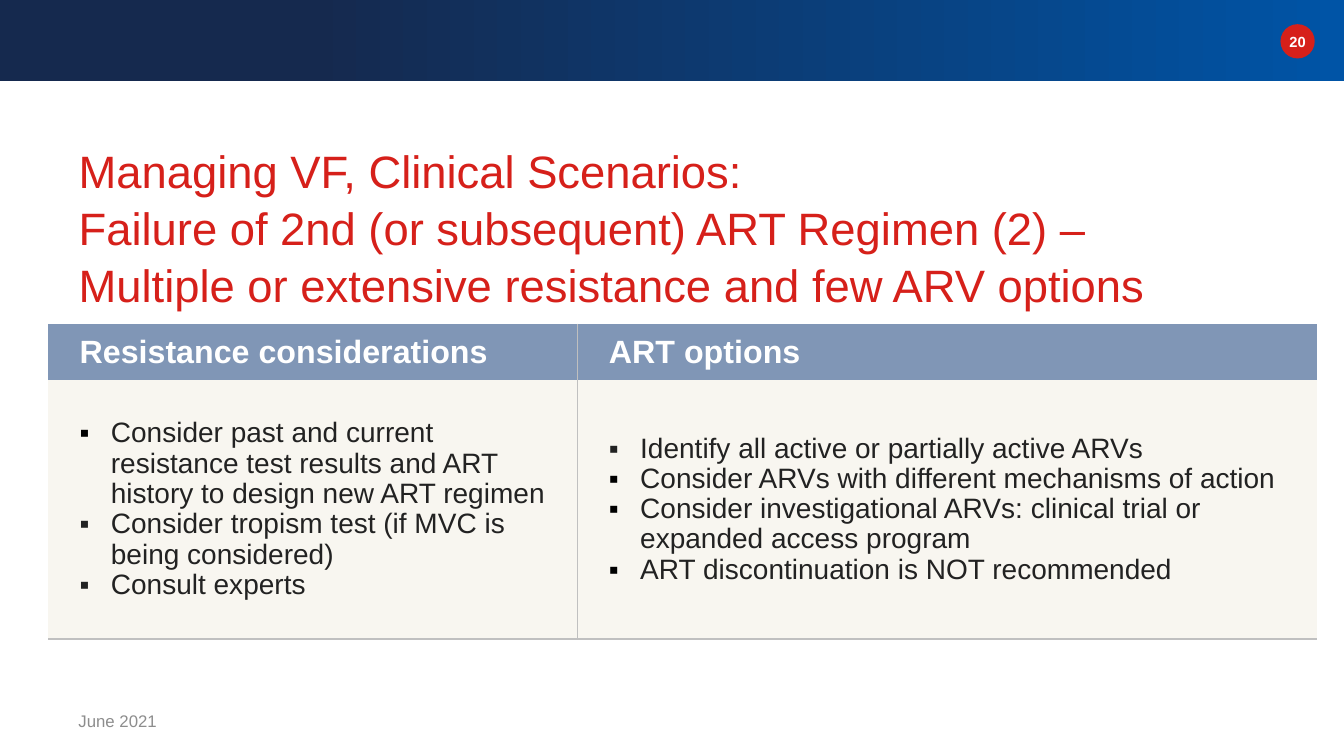
from dataclasses import dataclass

from lxml import etree
from pptx import Presentation
from pptx import util as u
from pptx.dml.color import RGBColor
from pptx.enum import shapes, text
from pptx.oxml.ns import qn


@dataclass(frozen=True)
class Theme:
    font: str = "Arial"
    navy: str = "15294E"
    blue: str = "0054A6"
    red: str = "D6201A"
    white: str = "FFFFFF"
    ink: str = "222222"
    black: str = "000000"
    grey: str = "8D8D8D"
    header: str = "8096B6"
    body: str = "F8F6F0"
    header_line: str = "BFBFBF"
    body_line: str = "C0C0C0"
    title_pt: float = 32.4
    header_pt: float = 23
    body_pt: float = 20
    footer_pt: float = 12
    number_pt: float = 10.5


T = Theme()


def rgb(color):
    return RGBColor.from_string(color)


def write(p, content, size, color, bold=False, align=None, spacing=None):
    p.text = content
    p.alignment = align
    p.line_spacing = spacing
    for r in p.runs:
        r.font.name = T.font
        r.font.size = u.Pt(size)
        r.font.bold = bold
        r.font.color.rgb = rgb(color)


def add_bullet(p, color):
    pPr = p._p.get_or_add_pPr()
    indent = u.Inches(0.31)
    pPr.set("marL", str(indent))
    pPr.set("indent", str(-indent))
    clr = etree.SubElement(pPr, qn("a:buClr"))
    etree.SubElement(clr, qn("a:srgbClr"), val=color)
    etree.SubElement(pPr, qn("a:buFont"), typeface=T.font)
    etree.SubElement(pPr, qn("a:buChar"), char="▪")


def add_borders(cell, colors):
    tcPr = cell._tc.get_or_add_tcPr()
    for side in ("L", "R", "T", "B"):
        ln = etree.SubElement(tcPr, qn(f"a:ln{side}"), w=str(u.Pt(1)))
        if side in colors:
            fill = etree.SubElement(ln, qn("a:solidFill"))
            etree.SubElement(fill, qn("a:srgbClr"), val=colors[side])
        else:
            etree.SubElement(ln, qn("a:noFill"))


class Deck:
    """Hold the theme and the current slide, and add elements to it."""

    def __init__(self, theme):
        self.theme = theme
        self.prs = Presentation()
        self.prs.slide_width, self.prs.slide_height = u.Inches(13.33), u.Inches(7.5)
        self.s = self.prs.slides.add_slide(self.prs.slide_layouts[5])

    def shape(self, kind, box, color):
        sp = self.s.shapes.add_shape(kind, *map(u.Inches, box))
        sp.shadow.inherit = False
        sp.line.fill.background()
        sp.fill.solid()
        sp.fill.fore_color.rgb = rgb(color)
        return sp

    def band(self, box, stops):
        sp = self.shape(shapes.MSO_SHAPE.RECTANGLE, box, self.theme.navy)
        sp.fill.gradient()
        sp.fill.gradient_angle = 0
        for stop, (position, color) in zip(sp.fill.gradient_stops, stops):
            stop.position = position
            stop.color.rgb = rgb(color)

    def title(self, box, content):
        sp = self.s.shapes.title
        sp.left, sp.top, sp.width, sp.height = map(u.Inches, box)
        tf = sp.text_frame
        tf.word_wrap = True
        tf.auto_size = text.MSO_AUTO_SIZE.NONE
        tf.vertical_anchor = text.MSO_ANCHOR.TOP
        tf.margin_top = u.Inches(0.08)
        write(tf.paragraphs[0], content, self.theme.title_pt, self.theme.red,
              align=text.PP_ALIGN.LEFT, spacing=1.05)

    def label(self, box, content, size, color, **fmt):
        tf = self.s.shapes.add_textbox(*map(u.Inches, box)).text_frame
        tf.word_wrap = True
        tf.vertical_anchor = text.MSO_ANCHOR.MIDDLE
        write(tf.paragraphs[0], content, size, color, **fmt)

    def cell(self, cell, fill, borders):
        cell.margin_left = cell.margin_right = u.Inches(0.31)
        cell.margin_top = cell.margin_bottom = u.Inches(0.06)
        cell.vertical_anchor = text.MSO_ANCHOR.MIDDLE
        add_borders(cell, borders)
        cell.fill.solid()
        cell.fill.fore_color.rgb = rgb(fill)
        return cell.text_frame

    def table(self, box, widths, heights, columns):
        t = self.theme
        tbl = self.s.shapes.add_table(2, len(columns), *map(u.Inches, box)).table
        tbl.first_row = tbl.horz_banding = False
        for row, height in zip(tbl.rows, heights):
            row.height = u.Inches(height)
        for i, (heading, items) in enumerate(columns):
            tbl.columns[i].width = u.Inches(widths[i])
            inner = "R" if i == 0 else "L"
            tf = self.cell(tbl.cell(0, i), t.header, {inner: t.header_line})
            write(tf.paragraphs[0], heading, t.header_pt, t.white, bold=True, spacing=1.02)
            tf = self.cell(tbl.cell(1, i), t.body, {inner: t.body_line, "B": t.body_line})
            for n, (item, bullet) in enumerate(items):
                p = tf.add_paragraph() if n else tf.paragraphs[0]
                write(p, item, t.body_pt, t.ink, spacing=0.97)
                add_bullet(p, bullet)


def main():
    deck = Deck(T)
    deck.band((0, 0, 13.33, 0.8), [(0.23, T.navy), (1, T.blue)])
    deck.shape(shapes.MSO_SHAPE.OVAL, (12.7, 0.24, 0.34, 0.34), T.red)
    deck.label((12.65, 0.27, 0.44, 0.28), "20", T.number_pt, T.white,
               bold=True, align=text.PP_ALIGN.CENTER)
    deck.title((0.68, 1.31, 11.5, 2.06),
               "Managing VF, Clinical Scenarios:\v"
               "Failure of 2nd (or subsequent) ART Regimen (2) –\v"
               "Multiple or extensive resistance and few ARV options")
    deck.table((0.48, 3.21, 12.58, 3.13), (5.25, 7.33), (0.56, 2.57), [
        ("Resistance considerations", [
            ("Consider past and current resistance test results and ART history "
             "to design new ART regimen", T.black),
            ("Consider tropism test (if MVC is being considered)", T.ink),
            ("Consult experts", T.ink),
        ]),
        ("ART options", [
            ("Identify all active or partially active ARVs", T.ink),
            ("Consider ARVs with different mechanisms of action", T.black),
            ("Consider investigational ARVs: clinical trial or expanded access program",
             T.black),
            ("ART discontinuation is NOT recommended", T.black),
        ]),
    ])
    deck.label((0.68, 6.95, 3, 0.4), "June 2021", T.footer_pt, T.grey)
    deck.prs.save("out.pptx")


if __name__ == "__main__":
    main()
